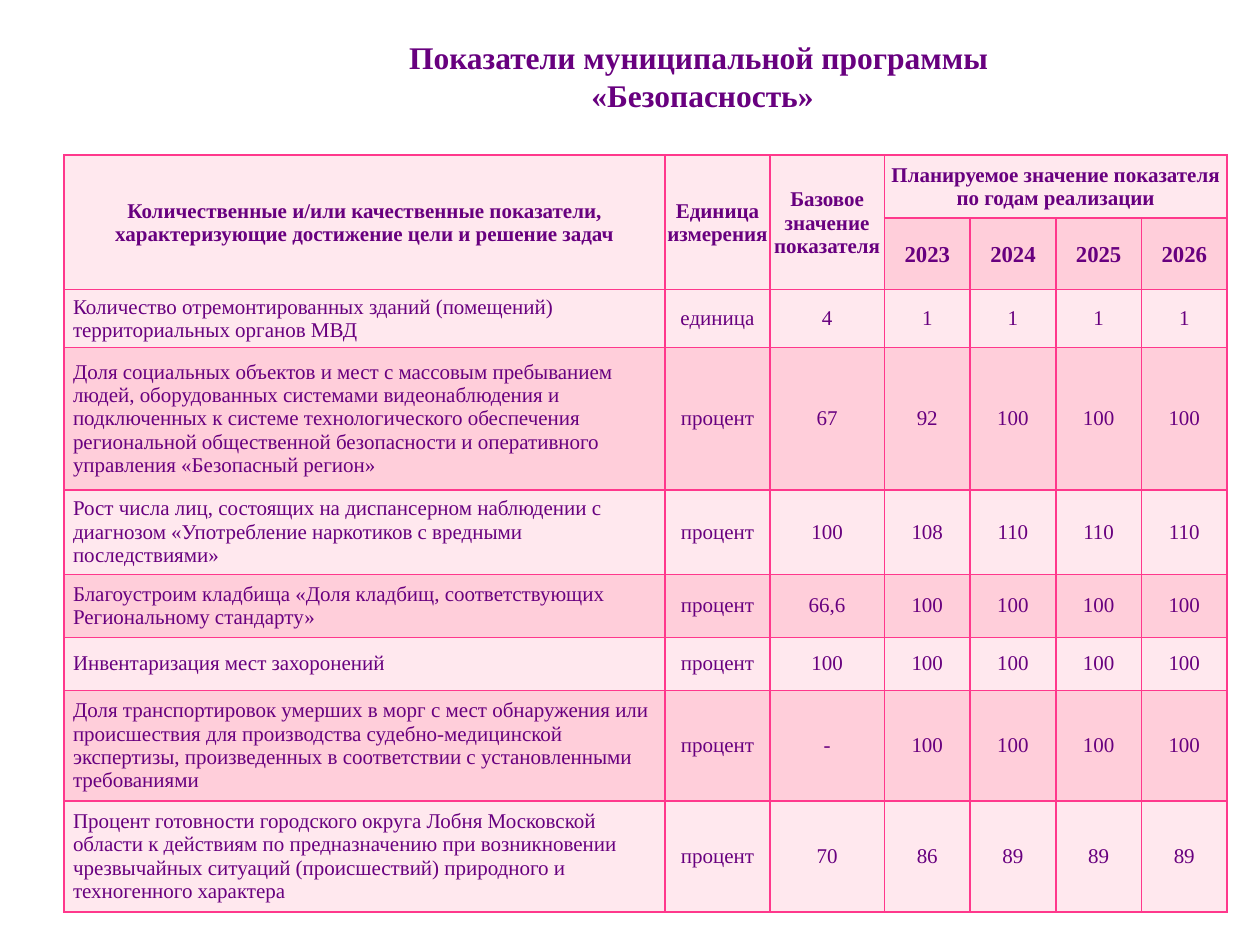
"""Builds a slide with the indicators of the municipal safety programme."""
from dataclasses import dataclass

from lxml import etree
from pptx import Presentation, util as u
from pptx.dml.color import RGBColor as Rgb
from pptx.enum import text as t
from pptx.oxml import ns


@dataclass
class Theme:
    face: str = "Times New Roman"
    ink: str = "68007F"
    line: str = "FF388C"
    pale: str = "FFE8EE"
    deep: str = "FFCEDA"
    head: int = 18
    year: int = 13
    body: int = 12


class Page:
    def __init__(self, deck, theme):
        self.deck, self.theme = deck, theme
        self.slide = deck.slides.add_slide(deck.slide_layouts[5])

    def across(self, part):
        return int(self.deck.slide_width * part / 100)

    def down(self, part):
        return int(self.deck.slide_height * part / 100)

    def style(self, frame, size, bold=False, align=t.PP_ALIGN.CENTER):
        frame.word_wrap = True
        for para in frame.paragraphs:
            para.alignment = align
            font = para.font
            font.name, font.size, font.bold = self.theme.face, u.Pt(size), bold
            font.color.rgb = Rgb.from_string(self.theme.ink)

    def title(self, words, left, top, width, height):
        shape = self.slide.shapes.title
        shape.left, shape.width = self.across(left), self.across(width)
        shape.top, shape.height = self.down(top), self.down(height)
        frame = shape.text_frame
        frame.text = words
        frame.vertical_anchor = t.MSO_ANCHOR.MIDDLE
        self.style(frame, self.theme.head, True)

    def frame(self, cell):
        props = cell._tc.get_or_add_tcPr()
        for side in "LRTB":
            edge = etree.SubElement(props, ns.qn(f"a:ln{side}"), w=str(u.Pt(1)))
            fill = etree.SubElement(edge, ns.qn("a:solidFill"))
            etree.SubElement(fill, ns.qn("a:srgbClr"), val=self.theme.line)

    def cell(self, cell, words, row, col):
        theme, top = self.theme, row < 2
        self.frame(cell)
        cell.fill.solid()
        cell.fill.fore_color.rgb = Rgb.from_string(theme.deep if row % 2 else theme.pale)
        cell.vertical_anchor = t.MSO_ANCHOR.MIDDLE
        cell.margin_left = cell.margin_right = u.Inches(0.01 if top else 0.07)
        cell.margin_top = u.Inches(0.01 if top else 0)
        cell.margin_bottom = 0
        cell.text = words
        left = col == 0 and not top
        self.style(cell.text_frame, theme.year if row == 1 else theme.body, top,
                   t.PP_ALIGN.LEFT if left else t.PP_ALIGN.CENTER)

    def table(self, data, left, top, cols, rows, spans):
        table = self.slide.shapes.add_table(
            len(rows), len(cols), self.across(left), self.down(top),
            self.across(sum(cols)), self.down(sum(rows))).table
        table.first_row = table.horz_banding = False
        for col, part in zip(table.columns, cols):
            col.width = self.across(part)
        for row, part in zip(table.rows, rows):
            row.height = self.down(part)
        for r, line in enumerate(data):
            for c, words in enumerate(line):
                self.cell(table.cell(r, c), words, r, c)
        for start, end in spans:
            table.cell(*start).merge(table.cell(*end))


PCT = "процент"
DATA = [
    ["Количественные и/или качественные показатели, характеризующие достижение цели "
     "и решение задач", "Единица измерения", "Базовое значение показателя",
     "Планируемое значение показателя по годам реализации", "", "", ""],
    ["", "", "", "2023", "2024", "2025", "2026"],
    ["Количество отремонтированных зданий (помещений) территориальных органов МВД",
     "единица", "4", "1", "1", "1", "1"],
    ["Доля социальных объектов и мест с массовым пребыванием людей, оборудованных "
     "системами видеонаблюдения и подключенных к системе технологического обеспечения "
     "региональной общественной безопасности и оперативного управления «Безопасный регион»",
     PCT, "67", "92", "100", "100", "100"],
    ["Рост числа лиц, состоящих на диспансерном наблюдении с диагнозом «Употребление "
     "наркотиков с вредными последствиями»", PCT, "100", "108", "110", "110", "110"],
    ["Благоустроим кладбища «Доля кладбищ, соответствующих Региональному стандарту»",
     PCT, "66,6", "100", "100", "100", "100"],
    ["Инвентаризация мест захоронений", PCT, "100", "100", "100", "100", "100"],
    ["Доля транспортировок умерших в морг с мест обнаружения или происшествия для "
     "производства судебно-медицинской экспертизы, произведенных в соответствии с "
     "установленными требованиями", PCT, "-", "100", "100", "100", "100"],
    ["Процент готовности городского округа Лобня Московской области к действиям по "
     "предназначению при возникновении чрезвычайных ситуаций (происшествий) природного "
     "и техногенного характера", PCT, "70", "86", "89", "89", "89"],
]


def main():
    deck = Presentation()
    deck.slide_width, deck.slide_height = u.Inches(10), u.Inches(7.5)
    page = Page(deck, Theme())
    page.title("Показатели муниципальной программы\v «Безопасность»", 22.4, 2.8, 66.1, 10.53)
    page.table(DATA, 5.1, 16.4, [47.7, 8.3, 9.1] + [6.8] * 4,
               [6.67, 7.6, 6.13, 15.07, 8.93, 6.67, 5.6, 11.73, 11.73],
               [((0, c), (1, c)) for c in range(3)] + [((0, 3), (0, 6))])
    deck.save("out.pptx")


if __name__ == "__main__":
    main()
